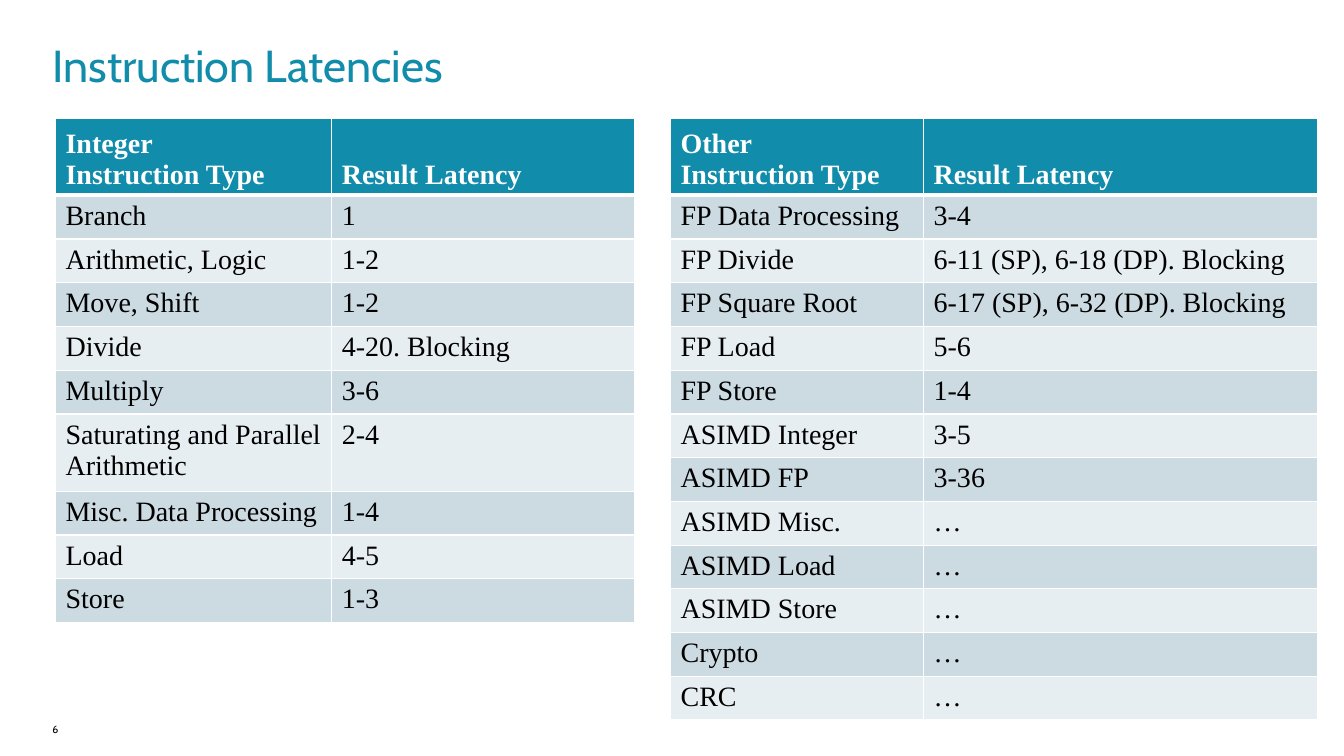
import pptx
import pptx.util
import pptx.dml.color
import pptx.enum.text
import pptx.oxml
import pptx.oxml.ns

Inches, Pt = pptx.util.Inches, pptx.util.Pt
RGBColor = pptx.dml.color.RGBColor
TEAL = RGBColor(0x12, 0x8C, 0xAB)
BAND_DARK = RGBColor(0xCC, 0xDA, 0xE2)
BAND_LIGHT = RGBColor(0xE7, 0xEE, 0xF1)
WHITE = RGBColor(0xFF, 0xFF, 0xFF)
BLACK = RGBColor(0, 0, 0)
HEADER_H, ROW_H, LINE_H = 0.7, 0.41, 0.3
LEFT = 0.52

INTEGER_ROWS = [
    ("Integer \nInstruction Type", "Result Latency"),
    ("Branch", "1"),
    ("Arithmetic, Logic", "1-2"),
    ("Move, Shift", "1-2"),
    ("Divide", "4-20. Blocking"),
    ("Multiply", "3-6"),
    ("Saturating and Parallel Arithmetic", "2-4"),
    ("Misc. Data Processing", "1-4"),
    ("Load", "4-5"),
    ("Store", "1-3"),
]
OTHER_ROWS = [
    ("Other \nInstruction Type", "Result Latency"),
    ("FP Data Processing", "3-4"),
    ("FP Divide", "6-11 (SP), 6-18 (DP). Blocking"),
    ("FP Square Root", "6-17 (SP), 6-32 (DP). Blocking"),
    ("FP Load", "5-6"),
    ("FP Store", "1-4"),
    ("ASIMD Integer", "3-5"),
    ("ASIMD FP", "3-36"),
    ("ASIMD Misc.", "…"),
    ("ASIMD Load", "…"),
    ("ASIMD Store", "…"),
    ("Crypto", "…"),
    ("CRC", "…"),
]


def add_text(p, text, font, size, color, bold=False):
    for i, line in enumerate(text.split("\n")):
        if i:
            p.add_line_break()
        r = p.add_run()
        r.text = line
        r.font.name, r.font.size, r.font.bold = font, Pt(size), bold
        r.font.color.rgb = color


def add_border(cell, side, width):
    cell._tc.get_or_add_tcPr().append(pptx.oxml.parse_xml(
        f'<a:ln{side} {pptx.oxml.ns.nsdecls("a")} w="{Pt(width)}"><a:solidFill>'
        f'<a:srgbClr val="{WHITE}"/></a:solidFill></a:ln{side}>'))


prs = pptx.Presentation()
prs.slide_width, prs.slide_height = Inches(13.33), Inches(7.5)
s = prs.slides.add_slide(prs.slide_layouts[6])

# Title and slide number
for text, top, width, height, size, color in [
    ("Instruction Latencies", 0.37, 12.21, 0.63, 32, TEAL),
    ("6", 7.17, 1.43, 0.26, 7.5, BLACK),
]:
    tf = s.shapes.add_textbox(Inches(LEFT), Inches(top), Inches(width), Inches(height)).text_frame
    tf.word_wrap = True
    tf.margin_left = tf.margin_top = tf.margin_right = tf.margin_bottom = 0
    add_text(tf.paragraphs[0], text, "Cabin", size, color)

# Latency tables
for rows, left, top, widths in [
    (INTEGER_ROWS, 0.55, 1.17, (2.74, 3)),
    (OTHER_ROWS, 6.65, 1.17, (2.51, 3.91)),
]:
    heights = [HEADER_H] + [ROW_H] * (len(rows) - 1)
    table = s.shapes.add_table(len(rows), 2, Inches(left), Inches(top),
                               Inches(sum(widths)), Inches(sum(heights))).table
    for column, width in zip(table.columns, widths):
        column.width = Inches(width)
    for i, row in enumerate(rows):
        header = i == 0
        # A label too long for its column takes a second line
        table.rows[i].height = Inches(heights[i] + LINE_H * (len(row[0]) > 30))
        for j, text in enumerate(row):
            cell = table.cell(i, j)
            for side in "LRTB":
                below_header = (i, side) in [(0, "B"), (1, "T")]
                add_border(cell, side, 3 if below_header else 1)
            cell.fill.solid()
            cell.fill.fore_color.rgb = TEAL if header else (BAND_DARK if i % 2 else BAND_LIGHT)
            if header:
                cell.vertical_anchor = pptx.enum.text.MSO_ANCHOR.BOTTOM
            add_text(cell.text_frame.paragraphs[0], text, "Times New Roman", 20,
                     WHITE if header else BLACK, header)

prs.save("out.pptx")
